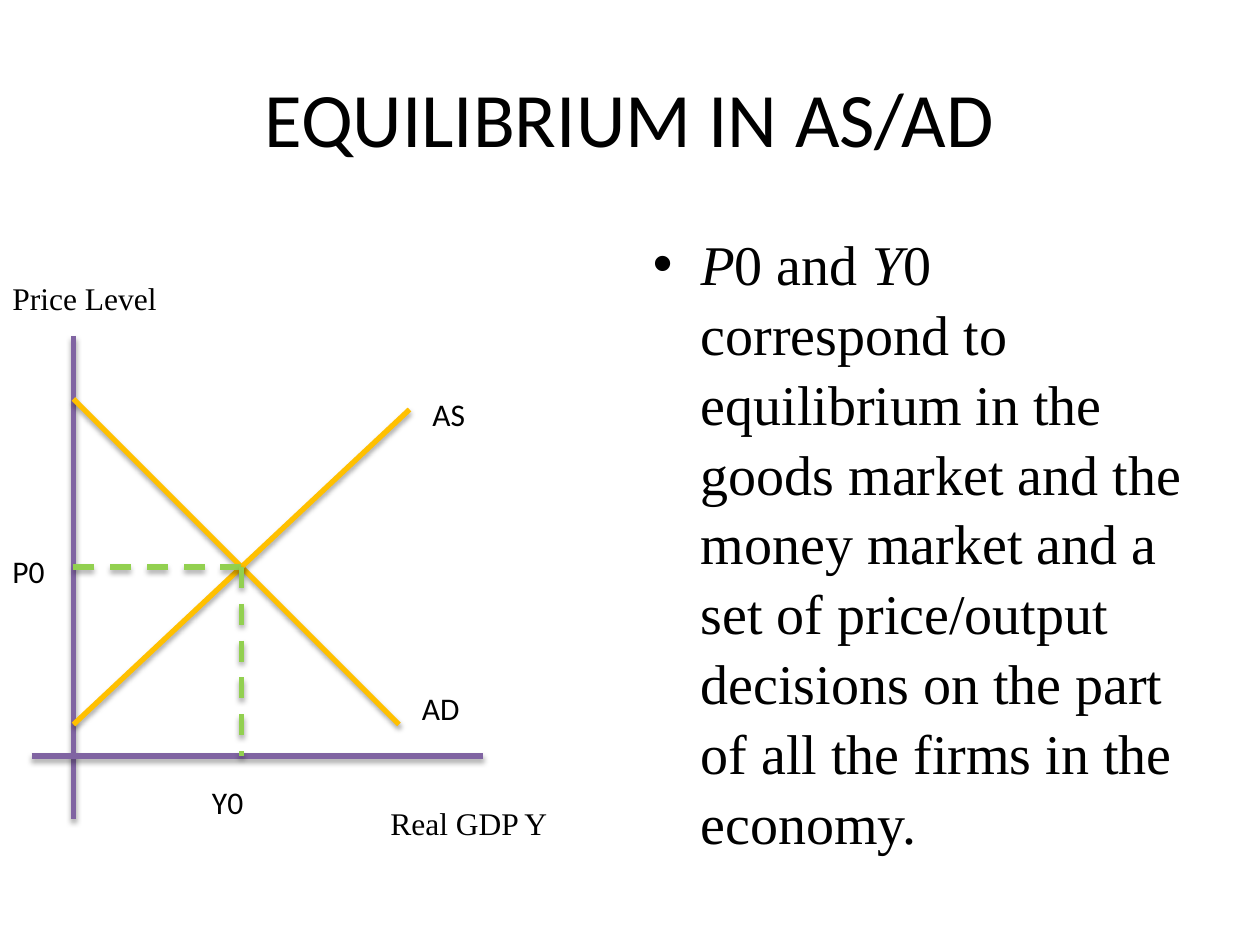
from lxml import etree
from pptx import Presentation, util as u
from pptx.dml.color import RGBColor
from pptx.enum import dml, shapes, text
from pptx.oxml import ns

CELL = u.Inches(1) // 12
COLS, ROWS = 120, 90
HUES = {"ink": "000000", "axis": "8064A2", "curve": "FFC000", "guide": "92D050"}
SANS, SERIF = "Calibri", "Times New Roman"


def cells(*nums):
    """Turn grid cells into lengths."""
    return [round(n * CELL) for n in nums]


def child(node, tag, **attrs):
    """Add a drawing element under a node."""
    return etree.SubElement(node, ns.qn("a:" + tag), attrs)


def style(para, font, size):
    """Give every run of a paragraph its font, size and ink."""
    for run in para.runs:
        run.font.name = font
        run.font.size = u.Pt(size)
        run.font.color.rgb = RGBColor.from_string(HUES["ink"])


def add_text(slide, box, words, font, size):
    """Place a wrapped text box and return its frame."""
    frame = slide.shapes.add_textbox(*cells(*box)).text_frame
    frame.word_wrap = True
    frame.text = words
    style(frame.paragraphs[0], font, size)
    return frame


def add_line(slide, ends, hue, dash=False):
    """Draw a line with a soft shadow below it."""
    line = slide.shapes.add_connector(shapes.MSO_CONNECTOR.STRAIGHT, *cells(*ends))
    line.line.width = u.Pt(3)
    line.line.color.rgb = RGBColor.from_string(HUES[hue])
    if dash:
        line.line.dash_style = dml.MSO_LINE.DASH
    glow = child(child(line._element.spPr, "effectLst"), "outerShdw",
                 blurRad=str(u.Pt(3.1)), dist=str(u.Pt(1.8)),
                 dir="5400000", rotWithShape="0")
    child(child(glow, "srgbClr", val=HUES["ink"]), "alpha", val="35000")


def add_title(slide, box):
    """Place the centred heading in its box."""
    frame = add_text(slide, box, "EQUILIBRIUM IN AS/AD", SANS, 44)
    frame.vertical_anchor = text.MSO_ANCHOR.MIDDLE
    frame.paragraphs[0].alignment = text.PP_ALIGN.CENTER


def add_graph(slide, box):
    """Draw the supply and demand graph from the corner of its box."""
    left, top, wide, high = box
    base, mid, org, eq = high - 8, 28, 7, 23
    lines = [
        ((org, 6, org, high - 2), "axis", False),
        ((3, base, wide - 11, base), "axis", False),
        ((org, 12, 38, base - 3), "curve", False),
        ((org, base - 3, 39, 13), "curve", False),
        ((eq, mid, org, mid), "guide", True),
        ((eq, mid, eq, base), "guide", True),
    ]
    for (x, y, x2, y2), hue, dash in lines:
        add_line(slide, (left + x, top + y, left + x2, top + y2), hue, dash)
    labels = [
        ("AS", 40, 11, 12, SANS),
        ("AD", 39, 39, 8, SANS),
        ("Real GDP Y", 36, 50, 21, SERIF),
        ("Price Level", 0, 0, 21, SERIF),
        ("P0", 0, 26, 8, SANS),
        ("Y0", 19, 48, 8, SANS),
    ]
    for words, x, y, span, font in labels:
        add_text(slide, (left + x, top + y, span, 5), words, font, 18)


def add_body(slide, box):
    """Place the bulleted explanation in its box."""
    frame = add_text(slide, box, "", SERIF, 32)
    para = frame.paragraphs[0]
    parts = ["P", "0 and ", "Y", "0 correspond to equilibrium in the goods market "
             "and the money market and a set of price/output decisions "
             "on the part of all the firms in the economy."]
    for i, part in enumerate(parts):
        run = para.add_run()
        run.text = part
        run.font.italic = i % 2 == 0
    style(para, SERIF, 32)
    para.line_spacing = 1.04
    para.space_before = u.Pt(2.5)
    props = para._p.get_or_add_pPr()
    props.set("marL", str(u.Inches(0.38)))
    props.set("indent", str(-u.Inches(0.38)))
    child(props, "buFont", typeface="Arial")
    child(props, "buChar", char="•")


def main():
    """Build and save the slide."""
    deck = Presentation()
    deck.slide_width, deck.slide_height = cells(COLS, ROWS)
    slide = deck.slides.add_slide(deck.slide_layouts[6])
    add_title(slide, (6, 3.6, COLS - 12, 15))
    add_body(slide, (61, 21, 53, 59.4))
    add_graph(slide, (0, 26, 57, 54))
    deck.save("out.pptx")


if __name__ == "__main__":
    main()
